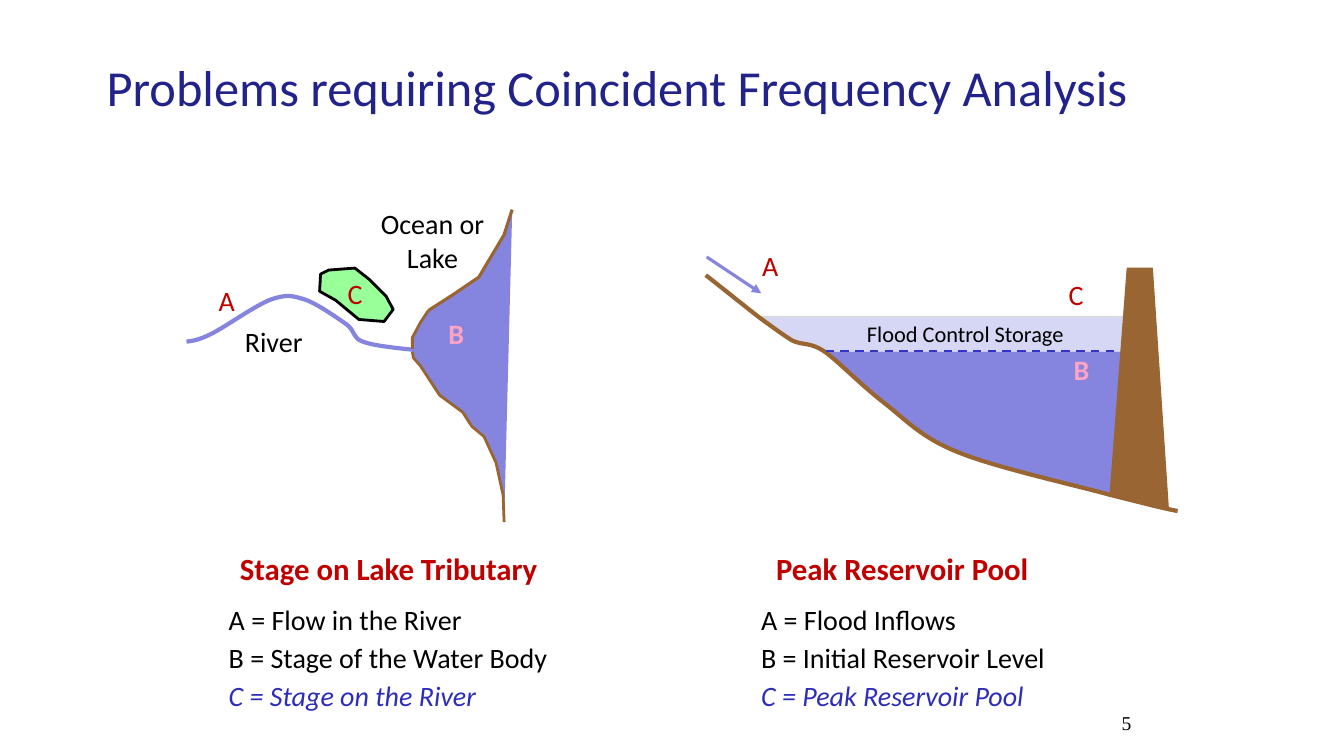
from dataclasses import dataclass

from lxml.etree import SubElement
from pptx import Presentation
from pptx.dml.color import RGBColor as Color
from pptx.enum.dml import MSO_LINE_DASH_STYLE as Dash
from pptx.enum.shapes import MSO_CONNECTOR_TYPE as Connector
from pptx.enum.text import MSO_VERTICAL_ANCHOR as Anchor
from pptx.enum.text import PP_PARAGRAPH_ALIGNMENT as Align
from pptx.oxml.ns import qn
from pptx.util import Inches, Pt


@dataclass(frozen=True)
class Theme:
    """Colours, fonts and type sizes of the slide."""
    title: str = "22228B"
    text: str = "000000"
    accent: str = "C00000"
    result: str = "2D2DB9"
    stage: str = "FFA3C2"
    water: str = "8585E0"
    storage: str = "D6D6F5"
    storage_edge: str = "D9D9D9"
    level: str = "3333CC"
    earth: str = "996633"
    town: str = "99FF99"
    font: str = "Calibri"
    number_font: str = "Times New Roman"
    title_size: int = 36
    heading_size: int = 22
    body_size: int = 20
    small_size: int = 16
    number_size: int = 14


class Sketch:
    """Draws styled elements on one page."""

    def __init__(self, page, theme):
        """Keep the page and its theme."""
        self.page = page
        self.theme = theme

    def text(self, words, place, color=None, size=None, bold=False, font=None,
             align=Align.LEFT, anchor=Anchor.TOP, wrap=False, gap=0):
        """Add a text box, one paragraph per line of words."""
        box = self.page.shapes.add_textbox(*map(Inches, place))
        frame = box.text_frame
        frame.text = words
        frame.word_wrap = wrap
        frame.vertical_anchor = anchor
        for para in frame.paragraphs:
            para.alignment = align
            para.space_before = Pt(gap)
            for span in para.runs:
                span.font.name = font or self.theme.font
                span.font.size = Pt(size or self.theme.body_size)
                span.font.bold = bold
                span.font.color.rgb = Color.from_string(color or self.theme.text)
        return box

    def letter(self, name, left, top):
        """Add a one-letter variable label, with B in the water style."""
        in_water = name == "B"
        color = self.theme.stage if in_water else self.theme.accent
        self.text(name, (left, top, 0.5, 0.43), color, bold=in_water, wrap=True)

    def heading(self, words, left, width):
        """Add the heading under a diagram."""
        self.text(words, (left, 5.4, width, 0.47), self.theme.accent,
                  self.theme.heading_size, bold=True)

    def legend(self, words, left, width):
        """Add the list of variables with the result line emphasised."""
        box = self.text(words, (left, 5.93, width, 1.21), gap=3)
        for span in box.text_frame.paragraphs[-1].runs:
            span.font.italic = True
            span.font.color.rgb = Color.from_string(self.theme.result)

    def outline(self, points, fill=None, line=None, weight=0.75, close=False):
        """Add a freeform through points given in inches."""
        start, *rest = [(Inches(x), Inches(y)) for x, y in points]
        builder = self.page.shapes.build_freeform(*start)
        builder.add_line_segments(rest, close=close)
        shape = builder.convert_to_shape()
        shape.shadow.inherit = False
        if fill:
            shape.fill.solid()
            shape.fill.fore_color.rgb = Color.from_string(fill)
        else:
            shape.fill.background()
        if line:
            shape.line.color.rgb = Color.from_string(line)
            shape.line.width = Pt(weight)
        else:
            shape.line.fill.background()
        return shape

    def curve(self, points, line, weight):
        """Add a Bezier curve: a start, then triples of two controls and an end."""
        shape = self.outline(points, line=line, weight=weight)
        trail = next(shape.element.iter(qn("a:path")))
        steps = trail.findall(qn("a:lnTo"))
        for first in range(0, len(steps), 3):
            bend = SubElement(trail, qn("a:cubicBezTo"))
            for step in steps[first:first + 3]:
                bend.append(step[0])
                trail.remove(step)

    def line(self, start, end, color, weight, dash=None, arrow=False):
        """Add a straight line, dashed or with an arrowhead if asked."""
        ends = map(Inches, (*start, *end))
        link = self.page.shapes.add_connector(Connector.STRAIGHT, *ends)
        link.line.color.rgb = Color.from_string(color)
        link.line.width = Pt(weight)
        if dash:
            link.line.dash_style = dash
        if arrow:
            SubElement(link.line._get_or_add_ln(), qn("a:tailEnd"), type="triangle")
        SubElement(link.element.spPr, qn("a:effectLst"))


def draw_tributary(sketch):
    """Draw the river that flows into a lake."""
    theme = sketch.theme
    upper = [(5.08, 2.08), (5, 2.33), (4.75, 2.75), (4.5, 2.92), (4.25, 3.08)]
    mouth = [(4.25, 3.08), (4.17, 3.2), (4.09, 3.35), (4.09, 3.46)]
    lower = [(4.09, 3.49), (4.1, 3.55), (4.17, 3.63), (4.36, 3.92), (4.59, 4.09),
             (4.68, 4.23), (4.8, 4.33), (4.92, 4.59), (4.99, 4.91), (5, 5.18)]
    sketch.outline(upper + mouth[1:] + lower, fill=theme.water)
    sketch.curve([(4.1, 3.47), (3.91, 3.45), (3.71, 3.43), (3.6, 3.39),
                  (3.49, 3.35), (3.53, 3.29), (3.44, 3.22),
                  (3.34, 3.15), (3.14, 3.01), (3.02, 2.97),
                  (2.89, 2.93), (2.84, 2.92), (2.69, 2.97),
                  (2.53, 3.03), (2.24, 3.24), (2.1, 3.31),
                  (1.96, 3.38), (1.91, 3.38), (1.85, 3.39)], theme.water, 3)
    sketch.outline([(3.56, 3.17), (3.33, 2.98), (3.17, 2.89), (3.18, 2.72),
                    (3.26, 2.68), (3.52, 2.66), (3.66, 2.77), (3.83, 2.94),
                    (3.9, 3.07), (3.81, 3.19)], theme.town, theme.text, 2, close=True)
    for shore, weight in ((upper, 2.25), (mouth, 2), (lower, 2)):
        sketch.outline(shore, line=theme.earth, weight=weight)
    sketch.text("River", (2.33, 3.17, 0.78, 0.44))
    sketch.text("Ocean or\nLake", (3.64, 2, 1.3, 0.77), align=Align.CENTER)
    for name, left, top in (("A", 2.07, 2.76), ("B", 4.35, 3.09), ("C", 3.35, 2.69)):
        sketch.letter(name, left, top)
    sketch.heading("Stage on Lake Tributary", 2.28, 3.68)
    sketch.legend("A = Flow in the River\nB = Stage of the Water Body\n"
                  "C = Stage on the River", 2.17, 3.39)


def draw_reservoir(sketch):
    """Draw the reservoir section behind its dam."""
    theme = sketch.theme
    sketch.outline([(8.08, 3.43), (7.86, 3.38), (7.56, 3.14), (11.28, 3.14),
                    (11.26, 3.57), (8.29, 3.57)], theme.storage, theme.storage_edge)
    sketch.outline([(11.26, 4.96), (11.26, 3.49), (8.18, 3.49), (8.4, 3.67),
                    (8.76, 3.99), (9.01, 4.2), (9.28, 4.38), (9.63, 4.54),
                    (10.45, 4.77)], theme.water, close=True)
    sketch.curve([(7, 2.73), (7.09, 2.8), (7.39, 3.04), (7.53, 3.15),
                  (7.67, 3.25), (7.76, 3.32), (7.86, 3.38),
                  (7.97, 3.43), (8.03, 3.39), (8.18, 3.49),
                  (8.32, 3.59), (8.54, 3.82), (8.76, 3.99),
                  (8.98, 4.16), (9.13, 4.34), (9.51, 4.49),
                  (9.88, 4.64), (10.65, 4.81), (11.01, 4.91),
                  (11.37, 5), (11.52, 5.04), (11.68, 5.07)], theme.earth, 3)
    sketch.outline([(11.01, 4.9), (11.18, 2.66), (11.43, 2.66), (11.59, 5.07)],
                   theme.earth, theme.earth)
    sketch.text("Flood Control Storage", (8.5, 3.13, 2.18, 0.37), size=theme.small_size)
    sketch.line((8.19, 3.48), (11.1, 3.48), theme.level, 1.5, dash=Dash.DASH)
    sketch.line((7.01, 2.55), (7.55, 2.91), theme.water, 2.25, arrow=True)
    for name, left, top in (("A", 7.46, 2.42), ("B", 10.55, 3.45), ("C", 10.5, 2.7)):
        sketch.letter(name, left, top)
    sketch.heading("Peak Reservoir Pool", 7.6, 2.74)
    sketch.legend("A = Flood Inflows\nB = Initial Reservoir Level\n"
                  "C = Peak Reservoir Pool", 7.45, 3.05)


def main():
    """Build and save the deck."""
    deck = Presentation()
    deck.slide_width, deck.slide_height = Inches(13.33), Inches(7.5)
    theme = Theme()
    sketch = Sketch(deck.slides.add_slide(deck.slide_layouts[6]), theme)
    sketch.text("Problems requiring Coincident Frequency Analysis",
                (0.96, 0.23, 11.88, 1.25), theme.title, theme.title_size,
                anchor=Anchor.MIDDLE, wrap=True)
    draw_tributary(sketch)
    draw_reservoir(sketch)
    sketch.text("5", (9.24, 7, 2.08, 0.5), size=theme.number_size,
                font=theme.number_font, align=Align.RIGHT, wrap=True)
    deck.save("out.pptx")


if __name__ == "__main__":
    main()
